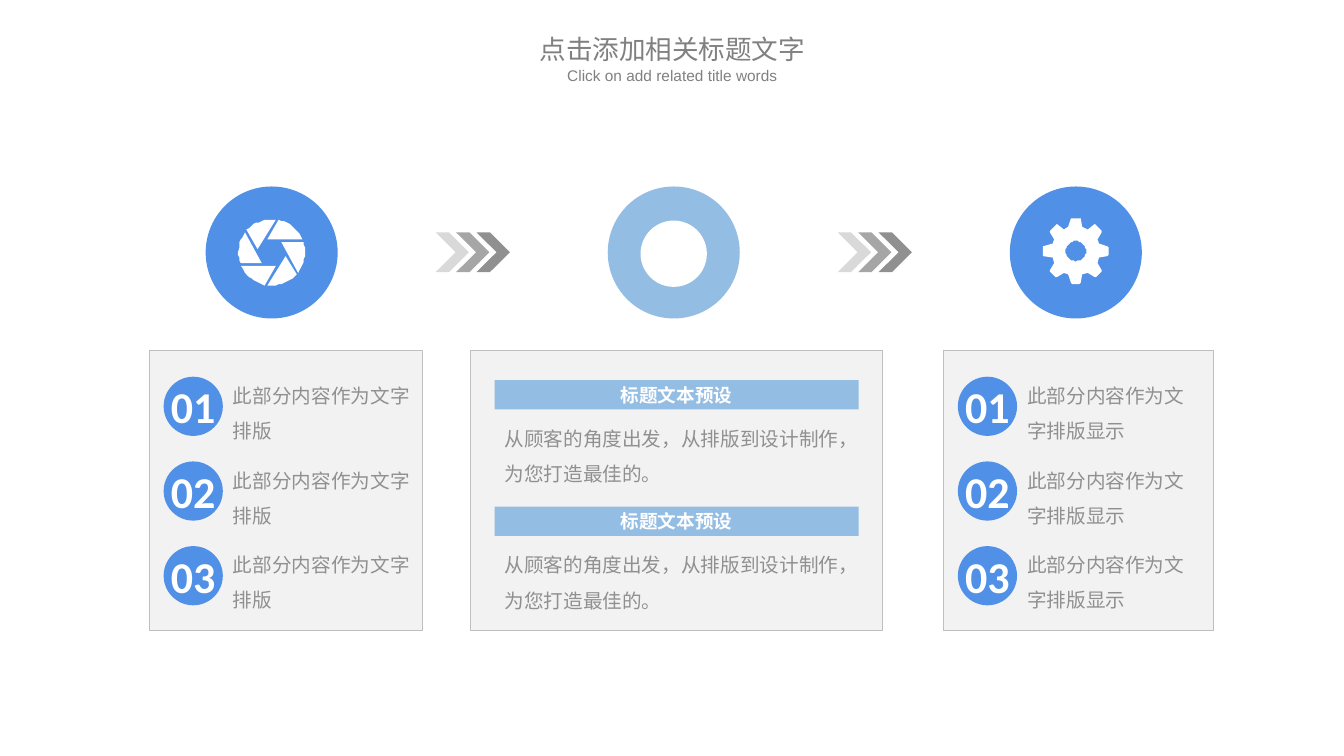
import math
from dataclasses import dataclass

import pptx
import pptx.dml.color
import pptx.enum.shapes
import pptx.enum.text
import pptx.oxml
import pptx.oxml.ns
import pptx.util
from lxml import etree

Pt = pptx.util.Pt
SHAPES = pptx.enum.shapes.MSO_SHAPE
ALIGN = pptx.enum.text.PP_ALIGN
ANCHOR = pptx.enum.text.MSO_ANCHOR


@dataclass(frozen=True)
class Theme:
    blue: str = "5190E7"
    sky: str = "94BDE3"
    white: str = "FFFFFF"
    panel: str = "F2F2F2"
    border: str = "BFBFBF"
    heading: str = "808080"
    text: str = "909090"
    arrows: tuple = ("D9D9D9", "A6A6A6", "909090")
    cjk: str = "Noto Sans CJK SC"
    latin: str = "Arial"
    label: str = "Calibri"
    title_size: float = 19
    subtitle_size: float = 11
    body_size: float = 14
    bar_size: float = 13.3
    number_size: float = 31.4


THEME = Theme()


def rgb(color):
    return pptx.dml.color.RGBColor.from_string(color)


def paint(shape, fill, border=None):
    shape.shadow.inherit = False
    shape.fill.solid()
    shape.fill.fore_color.rgb = rgb(fill)
    if border:
        shape.line.color.rgb = rgb(border)
        shape.line.width = Pt(0.25)
    else:
        shape.line.fill.background()
    return shape


def add_block(slide, kind, box, fill, border=None):
    return paint(slide.shapes.add_shape(kind, *map(Pt, box)), fill, border)


def place(shape, box):
    shape.left, shape.top, shape.width, shape.height = map(Pt, box)
    return shape


def write(shape, lines, size, color, font, align=ALIGN.LEFT, anchor=ANCHOR.TOP,
          bold=False, wrap=True, insets=(7.2, 3.6), spacing=1, gap=0):
    frame = shape.text_frame
    frame.text = "\n".join(lines)
    frame.auto_size = pptx.enum.text.MSO_AUTO_SIZE.NONE
    frame.word_wrap = wrap
    frame.vertical_anchor = anchor
    frame.margin_left = frame.margin_right = Pt(insets[0])
    frame.margin_top = frame.margin_bottom = Pt(insets[1])
    for paragraph in frame.paragraphs:
        paragraph.alignment = align
        paragraph.line_spacing = spacing
        paragraph.space_before = Pt(0)
        paragraph.space_after = Pt(gap)
        paragraph.font.name = font
        paragraph.font.size = Pt(size)
        paragraph.font.bold = bold
        paragraph.font.color.rgb = rgb(color)
        properties = paragraph._p.get_or_add_pPr()
        properties.set("marL", "0")
        properties.set("indent", "0")
        defaults = properties.find(pptx.oxml.ns.qn("a:defRPr"))
        east_asian = etree.SubElement(defaults, pptx.oxml.ns.qn("a:ea"))
        east_asian.set("typeface", THEME.cjk)
        defaults.addprevious(etree.Element(pptx.oxml.ns.qn("a:buNone")))


def polar(center, radius, degrees):
    angle = math.radians(degrees)
    return center[0] + radius * math.cos(angle), center[1] + radius * math.sin(angle)


def add_outline(slide, contours, fill):
    first, *others = contours
    builder = slide.shapes.build_freeform(*first[0], scale=Pt(1))
    builder.add_line_segments(first[1:], close=True)
    for contour in others:
        builder.move_to(*contour[0])
        builder.add_line_segments(contour[1:], close=True)
    paint(builder.convert_to_shape(), fill)


def draw_aperture(slide, center):
    blades = [[polar(center, 23.7, turn + step) for step in range(-83, -139, -5)]
              + [polar(center, 10.2, turn - 166)] for turn in range(0, 360, 60)]
    add_outline(slide, blades, THEME.white)


def draw_disc(slide, center):
    radius = 23.7
    add_block(slide, SHAPES.OVAL,
              (center[0] - radius, center[1] - radius + 0.9, 2 * radius, 2 * radius), THEME.white)


def draw_gear(slide, center):
    center = center[0], center[1] - 1
    half_tooth = [(-5, 16.9), (-3.7, 23), (-2.8, 23.8)]
    tooth = half_tooth + [(-x, y) for x, y in reversed(half_tooth)]
    rim = [polar(center, math.hypot(x, y), turn + math.degrees(math.atan2(x, y)))
           for turn in range(0, 360, 45) for x, y in tooth]
    hole = [polar(center, 7.2, turn) for turn in range(0, 360, 10)]
    add_outline(slide, [rim, hole], THEME.white)


def add_badge(slide, box, fill, draw_icon):
    left, top, size = box
    add_block(slide, SHAPES.OVAL, (left, top, size, size), fill)
    draw_icon(slide, (left + size / 2, top + size / 2))


def add_arrows(slide, box):
    left, top, width, height = box
    for order, color in enumerate(THEME.arrows):
        chevron = add_block(slide, SHAPES.CHEVRON, (left + 14.6 * order, top, width, height), color)
        chevron.adjustments[0] = 0.6


def add_heading(slide, box, title, subtitle):
    left, top, width, height = box
    write(place(slide.shapes.title, (left, top, width, 28)), [title],
          THEME.title_size, THEME.heading, THEME.cjk, ALIGN.CENTER)
    caption = slide.shapes.add_textbox(*map(Pt, (left, top + 23.8, width, height - 23.8)))
    write(caption, [subtitle], THEME.subtitle_size, THEME.heading, THEME.latin, ALIGN.CENTER)


def add_numbered_panel(slide, box, items, listing):
    left, top, width, height = box
    add_block(slide, SHAPES.RECTANGLE, box, THEME.panel, THEME.border)
    for order in range(len(items)):
        number = add_block(slide, SHAPES.OVAL,
                           (left + 10.3, top + 18.6 + 60.5 * order, 42.3, 42.3), THEME.blue)
        write(number, [f"{order + 1:02}"], THEME.number_size, THEME.white, THEME.label,
              ALIGN.CENTER, ANCHOR.MIDDLE, bold=True, wrap=False, insets=(0, 0))
    slide.shapes._spTree.append(listing._element)
    place(listing, (left + 52.6, top + 11.7, width - 52.6, height - 11.7))
    write(listing, items, THEME.body_size, THEME.text, THEME.cjk, spacing=1.5, gap=10)


def add_topic_panel(slide, box, topics):
    left, top, width, height = box
    add_block(slide, SHAPES.RECTANGLE, box, THEME.panel, THEME.border)
    for order, (heading, detail) in enumerate(topics):
        bar_top = top + 21 + 90.4 * order
        bar = add_block(slide, SHAPES.RECTANGLE, (left + 17.3, bar_top, 260, 20.9), THEME.sky)
        write(bar, [heading], THEME.bar_size, THEME.white, THEME.label,
              ALIGN.CENTER, ANCHOR.MIDDLE, bold=True, wrap=False)
        note = slide.shapes.add_textbox(*map(Pt, (left + 17.3, bar_top + 21.4, 260, 58)))
        write(note, [detail], THEME.body_size, THEME.text, THEME.cjk, spacing=1.5)


def build_process_slide(deck):
    slide = deck.slides.add_slide(deck.slide_layouts.get_by_name("Two Content"))
    left_list, right_list = list(slide.placeholders)[1:]
    add_heading(slide, (365.8, 20.2, 229, 52), "点击添加相关标题文字", "Click on add related title words")

    badges = [(THEME.blue, draw_aperture), (THEME.sky, draw_disc), (THEME.blue, draw_gear)]
    for order, (fill, draw_icon) in enumerate(badges):
        add_badge(slide, (146.9 + 287.2 * order, 133.2, 94.3), fill, draw_icon)
    for order in range(len(badges) - 1):
        add_arrows(slide, (311.2 + 287.2 * order, 166, 23.8, 28.4))

    add_numbered_panel(slide, (106.6, 250.5, 195.1, 200), ["此部分内容作为文字排版"] * 3, left_list)
    topic = ("标题文本预设", "从顾客的角度出发，从排版到设计制作，为您打造最佳的。")
    add_topic_panel(slide, (336, 250.5, 294.2, 200), [topic] * 2)
    add_numbered_panel(slide, (673.9, 250.5, 193, 200), ["此部分内容作为文字排版显示"] * 3, right_list)


def main():
    deck = pptx.Presentation()
    deck.slide_width, deck.slide_height = Pt(960), Pt(540)
    build_process_slide(deck)
    deck.save("out.pptx")


if __name__ == "__main__":
    main()
